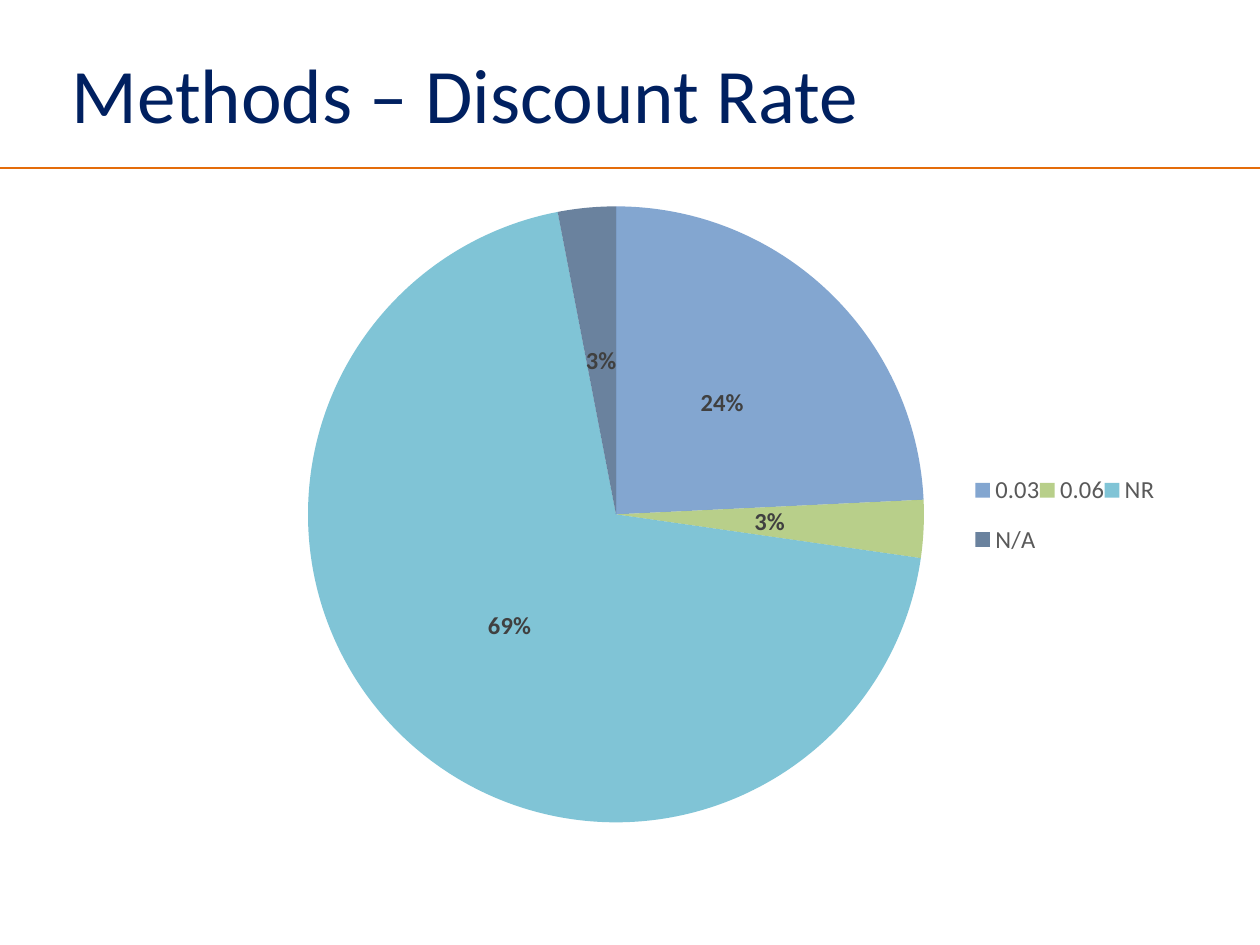
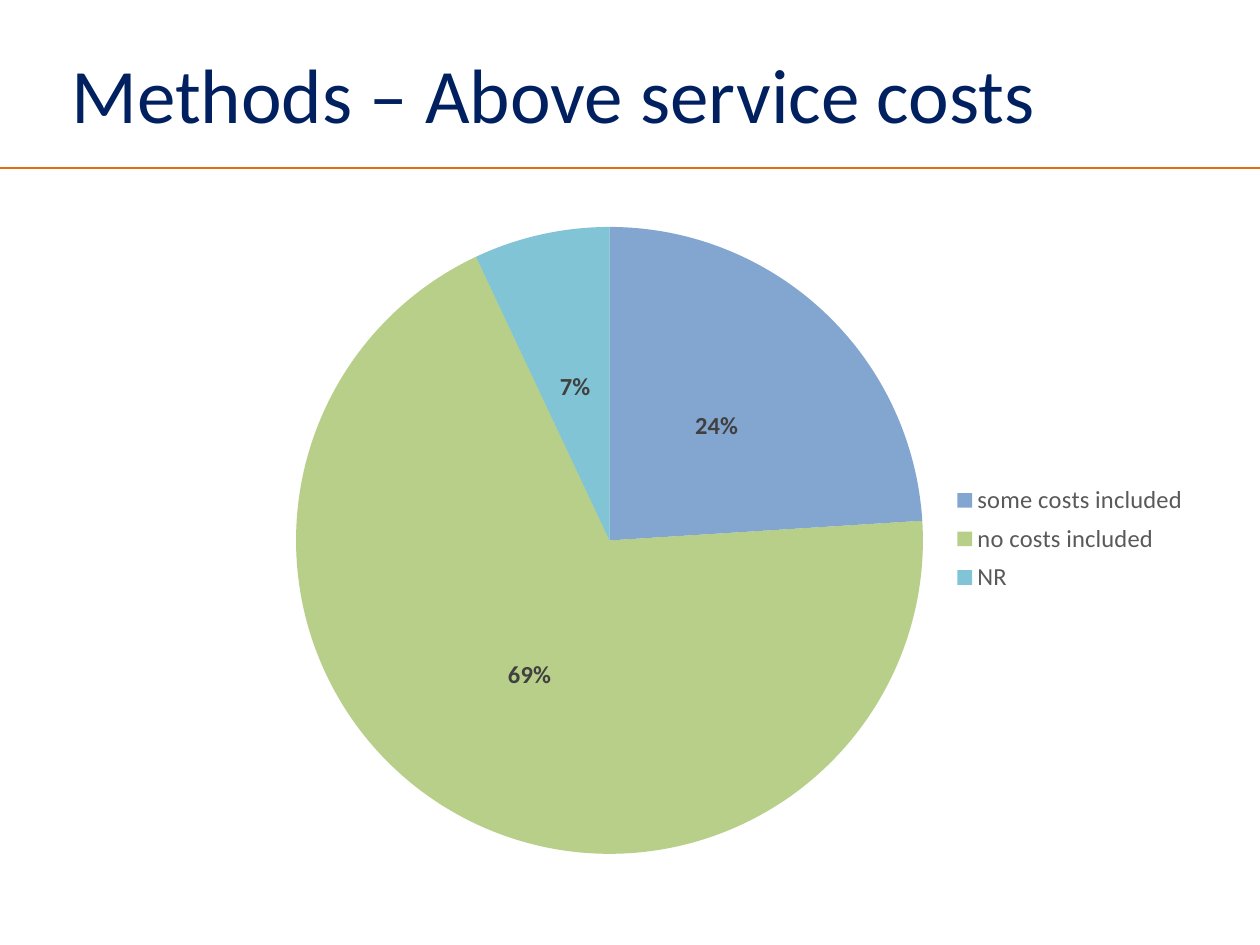
from lxml.etree import SubElement
from pptx import Presentation
from pptx.chart.data import CategoryChartData
from pptx.dml.color import RGBColor
from pptx.enum.chart import XL_CHART_TYPE, XL_LABEL_POSITION, XL_LEGEND_POSITION
from pptx.enum.shapes import MSO_CONNECTOR
from pptx.enum.text import MSO_ANCHOR
from pptx.oxml import parse_xml
from pptx.oxml.ns import nsdecls, qn
from pptx.util import Emu, Pt

PX = 914400 // 126
SLIDE_WIDTH, SLIDE_HEIGHT = 1260, 945
FONT = "Calibri"
NAVY, ORANGE = "002060", "E46C0A"
LABEL_GREY, LEGEND_GREY = "404040", "595959"
SLICE_COLORS = ["4F81BD", "9BBB59", "4BACC6", "2C4D75"]
SLICE_OPACITY = 70
TITLE_BOX = (59, 36, 1138, 131)
RULE_Y = 168

# Boxes are left, top, width, height; pie and legend are relative to the chart.
PIE_SLIDES = [
    {
        "title": "Methods – Discount Rate",
        "shares": {"0.03": 24, "0.06": 3, "NR": 69, "N/A": 3},
        "chart": (105, 189, 1113, 651),
        "pie": (203, 17, 616, 617),
        "legend": (870, 267, 180, 118),
    },
    {
        "title": "Methods – Above service costs",
        "shares": {"some costs included": 24, "no costs included": 69, "NR": 7},
        "chart": (231, 210, 1008, 662),
        "pie": (65, 17, 627, 627),
        "legend": (714, 267, 250, 124),
    },
]


def px(*lengths):
    return [Emu(length * PX) for length in lengths]


def rgb(color):
    return RGBColor.from_string(color)


def set_font(font, color, **values):
    font.color.rgb = rgb(color)
    for name, value in {"name": FONT, **values}.items():
        setattr(font, name, value)


def add_title(slide, text, box):
    frame = slide.shapes.add_textbox(*px(*box)).text_frame
    values = {"word_wrap": True, "vertical_anchor": MSO_ANCHOR.TOP,
              "margin_top": px(10)[0]}
    for name, value in values.items():
        setattr(frame, name, value)
    run = frame.paragraphs[0].add_run()
    run.text = text
    set_font(run.font, NAVY, size=Pt(44))


def add_rule(slide, y):
    rule = slide.shapes.add_connector(
        MSO_CONNECTOR.STRAIGHT, *px(0, y, SLIDE_WIDTH, y))
    rule.line.color.rgb = rgb(ORANGE)
    rule.line.width = Pt(1)
    SubElement(rule.element.spPr, qn("a:effectLst"))


def manual_layout(box, chart_box, inner=False):
    """Layout element that fixes a box as fractions of the chart."""
    left, top, width, height = box
    chart_width, chart_height = chart_box[2:]
    target = '<c:layoutTarget val="inner"/>' if inner else ""
    fractions = {"x": left / chart_width, "y": top / chart_height,
                 "w": width / chart_width, "h": height / chart_height}
    sizes = "".join(f'<c:{name} val="{value:.4f}"/>'
                    for name, value in fractions.items())
    return parse_xml(
        f'<c:layout {nsdecls("c")}><c:manualLayout>{target}'
        f'<c:xMode val="edge"/><c:yMode val="edge"/>{sizes}'
        '</c:manualLayout></c:layout>')


def place_plot(chart, pie_box, chart_box):
    plot_area = chart.element.chart.plotArea
    for layout in plot_area.findall(qn("c:layout")):
        plot_area.remove(layout)
    plot_area.insert(0, manual_layout(pie_box, chart_box, inner=True))


def add_legend(chart, legend_box, chart_box):
    chart.has_legend = True
    legend = chart.legend
    legend.position = XL_LEGEND_POSITION.RIGHT
    legend.include_in_layout = False
    set_font(legend.font, LEGEND_GREY, size=Pt(14))
    element = legend.font and chart.element.chart.find(qn("c:legend"))
    for layout in element.findall(qn("c:layout")):
        element.remove(layout)
    element.find(qn("c:legendPos")).addnext(
        manual_layout(legend_box, chart_box))


def color_slices(plot, count):
    for index, color in enumerate(SLICE_COLORS[:count]):
        fill = plot.series[0].points[index].format.fill
        fill.solid()
        fill.fore_color.rgb = rgb(color)
        for element in fill._xPr.iter(qn("a:srgbClr")):
            SubElement(element, qn("a:alpha"), val=str(SLICE_OPACITY * 1000))


def add_labels(plot):
    plot.has_data_labels = True
    labels = plot.data_labels
    values = {"show_value": True, "show_percentage": False,
              "number_format": '0"%"', "number_format_is_linked": False,
              "position": XL_LABEL_POSITION.CENTER}
    for name, value in values.items():
        setattr(labels, name, value)
    set_font(labels.font, LABEL_GREY, size=Pt(14), bold=True)


def add_pie(slide, shares, chart_box, pie_box, legend_box):
    data = CategoryChartData()
    data.categories = list(shares)
    data.add_series("Series 1", list(shares.values()))
    chart = slide.shapes.add_chart(
        XL_CHART_TYPE.PIE, *px(*chart_box), data).chart
    chart.has_title = False
    set_font(chart.font, "000000", size=Pt(10))
    plot = chart.plots[0]
    plot.vary_by_categories = True
    color_slices(plot, len(shares))
    add_labels(plot)
    place_plot(chart, pie_box, chart_box)
    add_legend(chart, legend_box, chart_box)


def add_pie_slide(presentation, content):
    slide = presentation.slides.add_slide(presentation.slide_layouts[6])
    add_rule(slide, RULE_Y)
    add_title(slide, content["title"], TITLE_BOX)
    add_pie(slide, content["shares"], content["chart"],
            content["pie"], content["legend"])


def main():
    presentation = Presentation()
    presentation.slide_width, presentation.slide_height = px(
        SLIDE_WIDTH, SLIDE_HEIGHT)
    for content in PIE_SLIDES:
        add_pie_slide(presentation, content)
    presentation.save("out.pptx")


if __name__ == "__main__":
    main()
